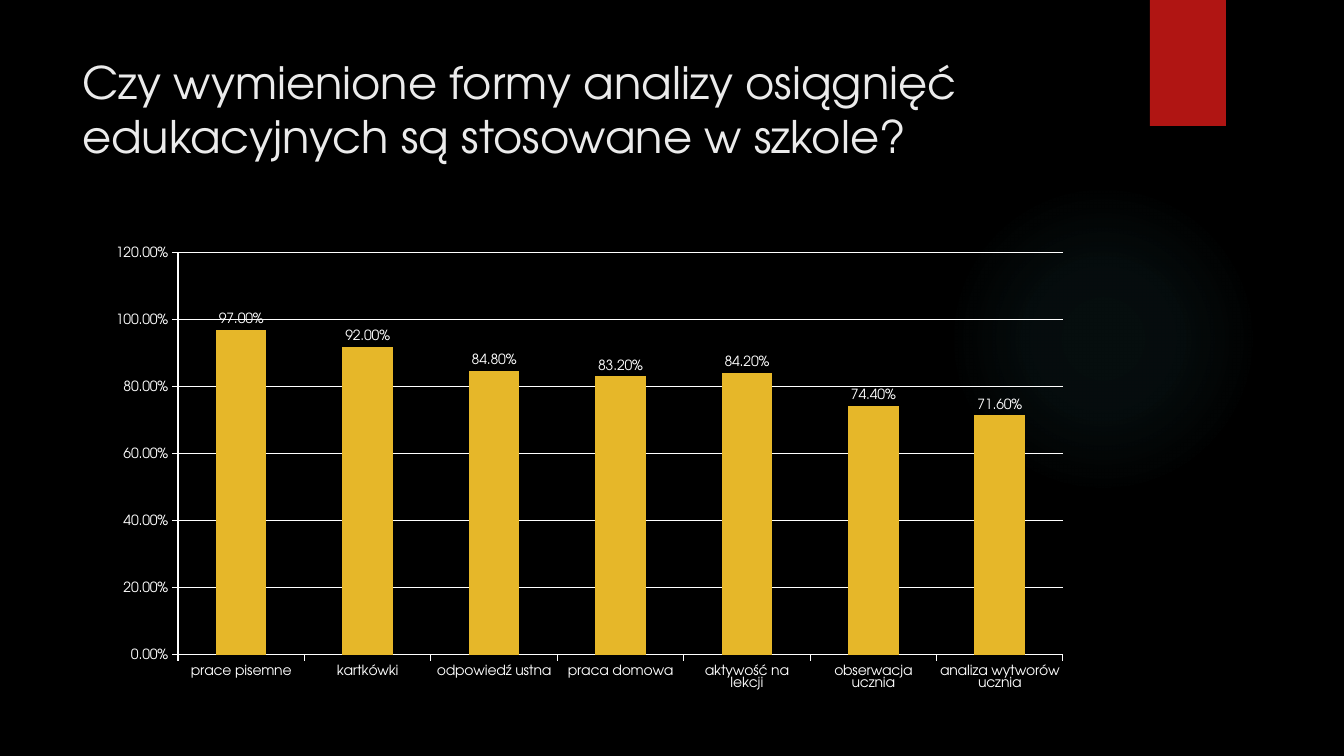
from lxml import etree
from pptx import Presentation
from pptx.chart.data import CategoryChartData
from pptx.dml.color import RGBColor
from pptx.enum.chart import XL_CHART_TYPE, XL_LABEL_POSITION, XL_TICK_MARK
from pptx.enum.shapes import MSO_SHAPE
from pptx.enum.text import MSO_ANCHOR, PP_ALIGN
from pptx.oxml import parse_xml
from pptx.oxml.ns import nsdecls, qn
from pptx.util import Pt

BLACK = RGBColor(0x00, 0x00, 0x00)
WHITE = RGBColor(0xFF, 0xFF, 0xFF)
PALE = RGBColor(0xEB, 0xEB, 0xEB)
RED = RGBColor(0xB0, 0x15, 0x13)
GOLD = RGBColor(0xE6, 0xB7, 0x29)
TEAL = RGBColor(0x50, 0xB9, 0xC1)

FORMS = {
    "prace pisemne": 0.97,
    "kartkówki": 0.92,
    "odpowiedź ustna": 0.848,
    "praca domowa": 0.832,
    "aktywość na lekcji": 0.842,
    "obserwacja ucznia": 0.744,
    "analiza wytworów ucznia": 0.716,
}


class SlideBuilder:
    font_name = "TeX Gyre Adventor"
    scale = 914400 / 100.8
    percent = "0.00%"

    def __init__(self, page):
        self.page = page
        page.background.fill.solid()
        page.background.fill.fore_color.rgb = BLACK

    @classmethod
    def emu(cls, *lengths):
        return [round(length * cls.scale) for length in lengths]

    def style(self, font, size, color):
        font.name = self.font_name
        font.size = Pt(size)
        font.color.rgb = color

    def shape(self, kind, frame, color):
        shape = self.page.shapes.add_shape(kind, *self.emu(*frame))
        shape.shadow.inherit = False
        shape.line.fill.background()
        shape.fill.solid()
        shape.fill.fore_color.rgb = color
        return shape

    def glow(self, frame, color, stops):
        shape = self.shape(MSO_SHAPE.OVAL, frame, color)
        stop_xml = "".join(
            f'<a:gs pos="{position * 1000}"><a:srgbClr val="{color}">'
            f'<a:alpha val="{alpha * 1000}"/></a:srgbClr></a:gs>'
            for position, alpha in stops
        )
        gradient = parse_xml(
            f'<a:gradFill {nsdecls("a")}><a:gsLst>{stop_xml}</a:gsLst>'
            '<a:path path="circle"><a:fillToRect l="50000" t="50000" '
            'r="50000" b="50000"/></a:path></a:gradFill>'
        )
        properties = shape.element.spPr
        properties.replace(properties.find(qn("a:solidFill")), gradient)

    def title(self, text, frame):
        box = self.page.shapes.title
        box.left, box.top, box.width, box.height = self.emu(*frame)
        box.text_frame.text = text
        box.text_frame.word_wrap = True
        box.text_frame.vertical_anchor = MSO_ANCHOR.TOP
        paragraph = box.text_frame.paragraphs[0]
        paragraph.alignment = PP_ALIGN.LEFT
        paragraph.line_spacing = 1.0
        self.style(paragraph.runs[0].font, 32, PALE)

    def column_chart(self, values, frame, plot_frame, color):
        data = CategoryChartData(number_format=self.percent)
        data.categories = list(values)
        data.add_series("Series 1", list(values.values()))
        chart = self.page.shapes.add_chart(
            XL_CHART_TYPE.COLUMN_CLUSTERED, *self.emu(*frame), data
        ).chart
        chart.has_legend = False
        chart.has_title = False
        self.style(chart.font, 10, WHITE)

        plot = chart.plots[0]
        plot.gap_width = 150
        plot.vary_by_categories = False
        fill = plot.series[0].format.fill
        fill.solid()
        fill.fore_color.rgb = color
        plot.has_data_labels = True
        labels = plot.data_labels
        labels.show_value = True
        labels.number_format = self.percent
        labels.number_format_is_linked = False
        labels.position = XL_LABEL_POSITION.OUTSIDE_END
        self.style(labels.font, 10, WHITE)

        for axis in (chart.category_axis, chart.value_axis):
            axis.major_tick_mark = XL_TICK_MARK.OUTSIDE
            axis.minor_tick_mark = XL_TICK_MARK.NONE
            self.line(axis.format.line)
            self.style(axis.tick_labels.font, 10, WHITE)
        value_axis = chart.value_axis
        value_axis.minimum_scale = 0
        value_axis.maximum_scale = 1.2
        value_axis.major_unit = 0.2
        value_axis.has_major_gridlines = True
        self.line(value_axis.major_gridlines.format.line)
        value_axis.tick_labels.number_format = self.percent
        value_axis.tick_labels.number_format_is_linked = False
        self.place_plot(chart, frame, plot_frame)

    def line(self, line):
        line.color.rgb = WHITE
        line.width = Pt(0.75)

    def place_plot(self, chart, frame, plot_frame):
        left, top, width, height = frame
        plot_left, plot_top, plot_width, plot_height = plot_frame
        settings = {
            "layoutTarget": "inner",
            "xMode": "edge",
            "yMode": "edge",
            "x": (plot_left - left) / width,
            "y": (plot_top - top) / height,
            "w": plot_width / width,
            "h": plot_height / height,
        }
        area = chart.plots[0]._element.getparent()
        for previous in area.findall(qn("c:layout")):
            area.remove(previous)
        layout = etree.Element(qn("c:layout"))
        manual = etree.SubElement(layout, qn("c:manualLayout"))
        for name, value in settings.items():
            etree.SubElement(manual, qn(f"c:{name}")).set("val", str(value))
        area.insert(0, layout)


def main():
    deck = Presentation()
    deck.slide_width, deck.slide_height = SlideBuilder.emu(1344, 756)
    builder = SlideBuilder(deck.slides.add_slide(deck.slide_layouts[5]))
    builder.glow((948, 184, 310, 310), TEAL, [(0, 7), (36, 6), (69, 0)])
    builder.shape(MSO_SHAPE.RECTANGLE, (1150, 0, 76, 126), RED)
    builder.title(
        "Czy wymienione formy analizy osiągnięć edukacyjnych są stosowane w szkole?",
        (72, 50, 1037, 154),
    )
    builder.column_chart(FORMS, (97, 238, 986, 463), (178, 253, 885, 402), GOLD)
    deck.save("out.pptx")


if __name__ == "__main__":
    main()
